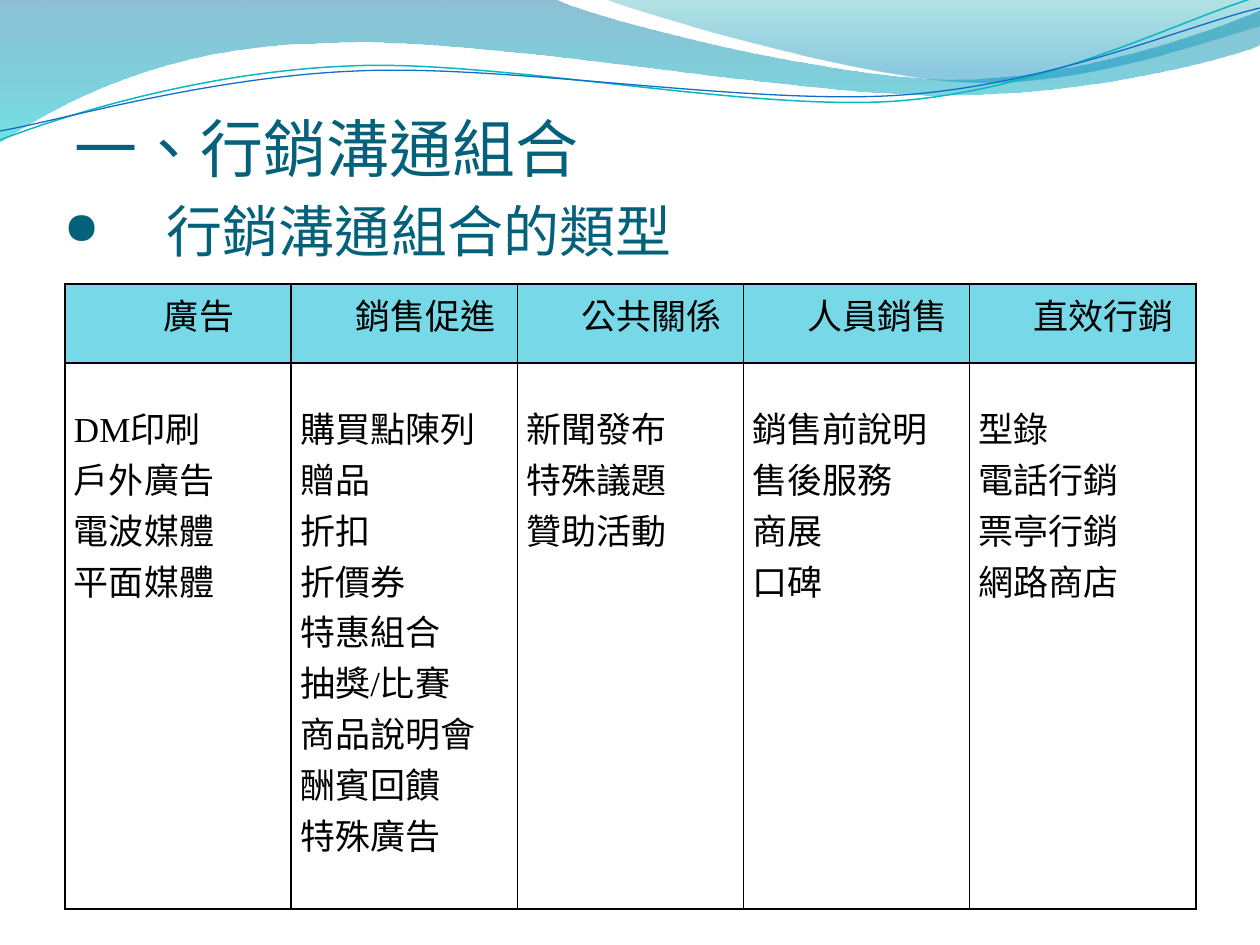
from math import cos, radians, sin

from lxml.etree import SubElement
from pptx import Presentation
from pptx.dml.color import RGBColor
from pptx.enum.text import MSO_ANCHOR, PP_ALIGN
from pptx.oxml.ns import qn
from pptx.util import Pt

SCALE = 914400 / 126
BAND = [(0, 0), [(554, -1)],
        [(600, 21), (837, 79), (955, 79)], [(1075, 79), (1207, 33), (1260, 11)],
        [(1261, 45)], [(1239, 55), (1096, 96), (940, 95)],
        [(784, 95), (481, 35), (324, 43)], [(163, 45), (58, 105), (-1, 142)], [(0, 0)]]
CREST = [(604, -1), [(641, 14), (859, 78), (969, 82)],
         [(1079, 87), (1211, 40), (1260, 26)], [(1260, 0)], [(604, -1)]]
TEAL_WAVE = [(0, 140), [(60, 117), (199, 72), (349, 66)],
             [(498, 59), (747, 112), (898, 101)], [(1050, 89), (1182, 19), (1257, -3)]]
BLUE_WAVE = [(0, 131), [(59, 121), (207, 77), (357, 71)],
             [(508, 64), (752, 106), (903, 95)], [(1053, 84), (1185, 26), (1260, 8)]]
FILLED = [(BAND, (-1, -1, 1262, 143), [(0, "0074A1", 45), (1, "00C6CF", 55)]),
          (CREST, (604, -1, 656, 88), [(0, "00A1A9", 30), (0.8, "008BBF", 45)])]
WAVES = [(TEAL_WAVE, (-2, 28, 1262, 89), "0AB8BF", 0.85),
         (BLUE_WAVE, (-2, 38, 1264, 73), "0F6FC6", 0.75)]
WAVE_TILT = -2.7

TITLE = "一、行銷溝通組合"
SUBTITLE = "行銷溝通組合的類型"
TYPES = {
    "廣告": ["DM印刷", "戶外廣告", "電波媒體", "平面媒體"],
    "銷售促進": ["購買點陳列", "贈品", "折扣", "折價券", "特惠組合", "抽獎/比賽",
             "商品說明會", "酬賓回饋", "特殊廣告"],
    "公共關係": ["新聞發布", "特殊議題", "贊助活動"],
    "人員銷售": ["銷售前說明", "售後服務", "商展", "口碑"],
    "直效行銷": ["型錄", "電話行銷", "票亭行銷", "網路商店"],
}
TABLE_BOX = (65, 284, 1131, 625)
HEAD_H = 79


def px(n):
    return round(n * SCALE)


def rgb(code):
    return RGBColor.from_string(code)


def to_frame(point, box, tilt):
    x, y, w, h = box
    dx, dy = point[0] - x - w / 2, point[1] - y - h / 2
    a = radians(-tilt)
    return (px(dx * cos(a) - dy * sin(a) + w / 2),
            px(dx * sin(a) + dy * cos(a) + h / 2))


def add_outline(s, outline, box, tilt=0):
    first, *segs = outline
    fb = s.shapes.build_freeform(*map(px, first))
    fb.add_line_segments([tuple(map(px, seg[-1])) for seg in segs], close=False)
    sp = fb.convert_to_shape()
    sp.shadow.inherit = False
    sp.left, sp.top, sp.width, sp.height = map(px, box)
    sp.rotation = tilt
    path = next(sp._element.iter(qn("a:path")))
    for child in list(path):
        path.remove(child)
    path.set("w", str(sp.width))
    path.set("h", str(sp.height))
    for i, seg in enumerate([[first], *segs]):
        tag = "a:moveTo" if i == 0 else "a:lnTo" if len(seg) == 1 else "a:cubicBezTo"
        step = SubElement(path, qn(tag))
        for point in seg:
            x, y = to_frame(point, box, tilt)
            SubElement(step, qn("a:pt"), x=str(x), y=str(y))
    if outline[-1][-1] == first:
        SubElement(path, qn("a:close"))
    return sp


def add_filled(s, outline, box, stops):
    sp = add_outline(s, outline, box)
    sp.line.fill.background()
    sp.fill.gradient()
    sp.fill.gradient_angle = 270
    for stop, (pos, color, _) in zip(sp.fill.gradient_stops, stops):
        stop.position = pos
        stop.color.rgb = rgb(color)
    for clr, (_, _, alpha) in zip(sp._element.spPr.iter(qn("a:srgbClr")), stops):
        SubElement(clr, qn("a:alpha"), val=str(alpha * 1000))


def add_wave(s, outline, box, color, width):
    sp = add_outline(s, outline, box, WAVE_TILT)
    sp.fill.background()
    sp.line.color.rgb = rgb(color)
    sp.line.width = Pt(width)


def style(p, size, font, color):
    for r in p.runs:
        r.font.size = Pt(size)
        r.font.name = font
        r.font.color.rgb = rgb(color)
        r._r.get_or_add_rPr().set("lang", "zh-TW")


def add_heading(s, box, text, size):
    tf = s.shapes.add_textbox(*map(px, box)).text_frame
    tf.word_wrap = True
    tf.vertical_anchor = MSO_ANCHOR.BOTTOM
    tf.margin_left = tf.margin_right = tf.margin_bottom = 0
    tf.margin_top = px(6)
    tf.text = text
    p = tf.paragraphs[0]
    style(p, size, "Arial", "04617B")
    return p


def add_bullet(p, char, indent):
    pPr = p._p.get_or_add_pPr()
    pPr.set("marL", str(px(indent)))
    pPr.set("indent", str(-px(indent)))
    SubElement(pPr, qn("a:buSzPct"), val="80000")
    SubElement(pPr, qn("a:buChar"), char=char)


def fill_cell(cell, text, color=None):
    tcPr = cell._tc.get_or_add_tcPr()
    for side in "LRTB":
        ln = SubElement(tcPr, qn(f"a:ln{side}"), w=str(Pt(1)))
        SubElement(SubElement(ln, qn("a:solidFill")), qn("a:srgbClr"), val="000000")
    if color:
        cell.fill.solid()
        cell.fill.fore_color.rgb = rgb(color)
    else:
        cell.fill.background()
    cell.margin_left = cell.margin_right = px(9)
    cell.margin_top = cell.margin_bottom = 0
    cell.text_frame.text = text
    for p in cell.text_frame.paragraphs:
        style(p, 20, "Times New Roman", "000000")


def add_types_table(s):
    _, _, width, height = TABLE_BOX
    table = s.shapes.add_table(2, len(TYPES), *map(px, TABLE_BOX)).table
    table.first_row = table.horz_banding = False
    table.rows[0].height = px(HEAD_H)
    table.rows[1].height = px(height - HEAD_H)
    for col, (name, items) in enumerate(TYPES.items()):
        table.columns[col].width = px(width / len(TYPES))
        head, body = table.cell(0, col), table.cell(1, col)
        fill_cell(head, name, "77D9E8")
        head.vertical_anchor = MSO_ANCHOR.MIDDLE
        p = head.text_frame.paragraphs[0]
        p.alignment = PP_ALIGN.CENTER
        p.line_spacing = Pt(18)
        p._p.get_or_add_pPr().set("marL", str(px(42)))
        fill_cell(body, "\n".join(items))
        body.margin_top = px(39)


def main():
    """Build the slide on the types of marketing communication mix."""
    prs = Presentation()
    prs.slide_width, prs.slide_height = px(1260), px(945)
    s = prs.slides.add_slide(prs.slide_layouts[6])
    for item in FILLED:
        add_filled(s, *item)
    for item in WAVES:
        add_wave(s, *item)
    add_types_table(s)
    add_heading(s, (74, 66, 1142, 119), TITLE, 36)
    add_bullet(add_heading(s, (64, 195, 1142, 69), SUBTITLE, 32), "●", 103)
    prs.save("out.pptx")


if __name__ == "__main__":
    main()
